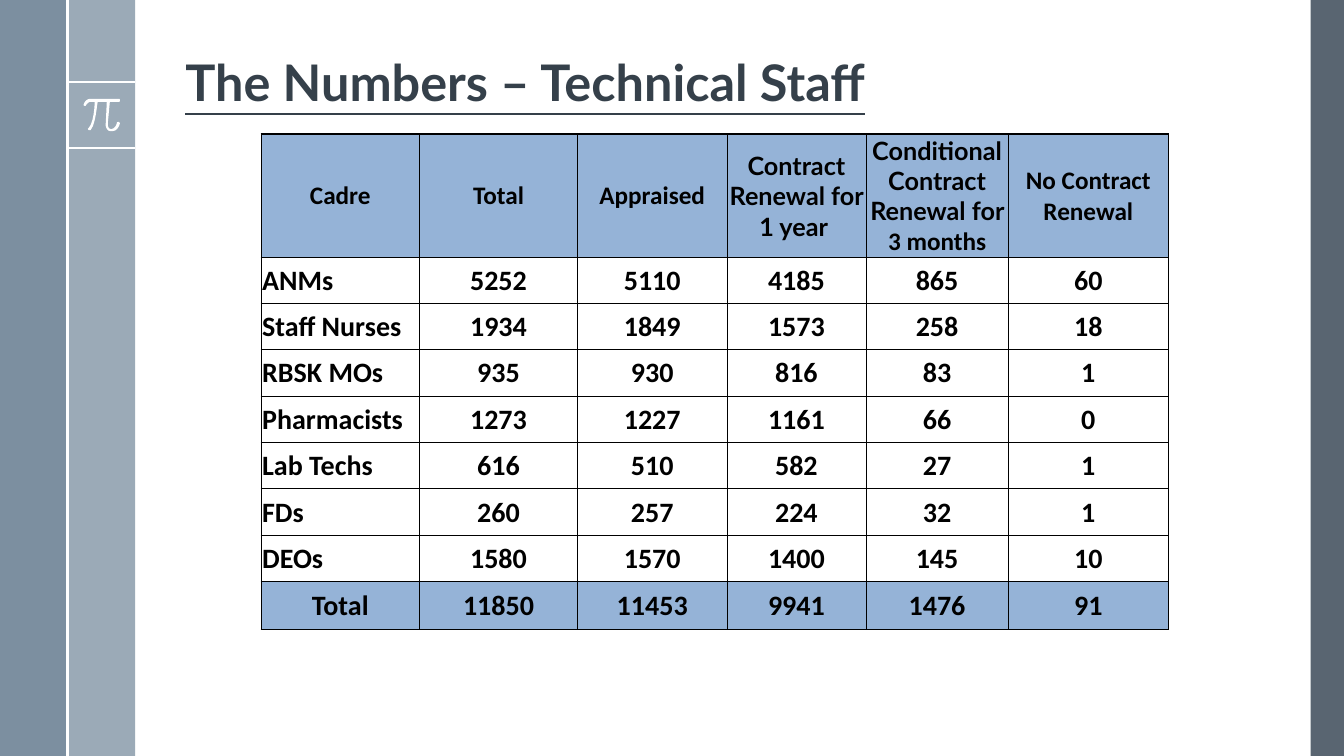
from lxml import etree
from pptx import Presentation, util as u
from pptx.dml.color import RGBColor
from pptx.enum import shapes, text
from pptx.oxml import ns

PX = 9144
COLORS = {
    "white": "FFFFFF", "black": "000000", "title": "35404A", "head": "95B3D7",
    "right": "475562", "band": "9BAAB7", "left": "6A8093",
}
ANCHOR = text.MSO_ANCHOR
ALIGN = text.PP_ALIGN


def rgb(name):
    return RGBColor.from_string(COLORS[name])


def write(tf, content, font="Calibri", size=20, color="black", underline=None,
          align=ALIGN.LEFT, spacing=None):
    p = tf.paragraphs[0]
    p.alignment = align
    p.line_spacing = spacing
    runs = [(content, font)] if isinstance(content, str) else content
    for words, face in runs:
        r = p.add_run()
        r.text = words
        r.font.name = face
        r.font.size = u.Pt(size)
        r.font.bold = True
        r.font.underline = underline
        r.font.color.rgb = rgb(color)


def cubic(start, seg, steps=6):
    pts = [start, seg[:2], seg[2:4], seg[4:]]
    for i in range(1, steps + 1):
        t = i / steps
        weights = ((1 - t) ** 3, 3 * t * (1 - t) ** 2, 3 * t * t * (1 - t), t ** 3)
        yield tuple(sum(w * pt[k] for w, pt in zip(weights, pts)) for k in (0, 1))


class Deck:
    def __init__(self, width, height):
        self.prs = Presentation()
        self.prs.slide_width = width * PX
        self.prs.slide_height = height * PX
        self.s = self.prs.slides.add_slide(self.prs.slide_layouts[6])

    def paint(self, sp, color, alpha=100):
        sp.shadow.inherit = False
        sp.line.fill.background()
        sp.fill.solid()
        sp.fill.fore_color.rgb = rgb(color)
        if alpha < 100:
            clr = sp.fill._xPr.find(".//" + ns.qn("a:srgbClr"))
            etree.SubElement(clr, ns.qn("a:alpha"), val=str(alpha * 1000))

    def rect(self, x, y, w, h, color, alpha=100):
        sp = self.s.shapes.add_shape(
            shapes.MSO_SHAPE.RECTANGLE, x * PX, y * PX, w * PX, h * PX)
        self.paint(sp, color, alpha)

    def line(self, x1, y1, x2, y2, color="white", width=1.5):
        c = self.s.shapes.add_connector(
            shapes.MSO_CONNECTOR.STRAIGHT, x1 * PX, y1 * PX, x2 * PX, y2 * PX)
        c.line.color.rgb = rgb(color)
        c.line.width = u.Pt(width)
        etree.SubElement(c._element.spPr, ns.qn("a:effectLst"))

    def outline(self, start, segments, color):
        pts = [start]
        for seg in segments:
            pts.extend([seg] if len(seg) == 2 else list(cubic(pts[-1], seg)))
        emu = [(x * PX, y * PX) for x, y in pts]
        fb = self.s.shapes.build_freeform(*emu[0])
        fb.add_line_segments(emu[1:], close=True)
        self.paint(fb.convert_to_shape(), color)

    def title(self, x, y, w, h, content):
        tf = self.s.shapes.add_textbox(x * PX, y * PX, w * PX, h * PX).text_frame
        tf.word_wrap = True
        tf.vertical_anchor = ANCHOR.BOTTOM
        write(tf, content, font="Lato", size=36, color="title", underline=True, spacing=0.9)

    def borders(self, cell, widths):
        tcPr = cell._tc.get_or_add_tcPr()
        for side, width in widths.items():
            ln = etree.SubElement(tcPr, ns.qn("a:ln" + side), w=str(u.Pt(width)))
            fill = etree.SubElement(ln, ns.qn("a:solidFill"))
            etree.SubElement(fill, ns.qn("a:srgbClr"), val=COLORS["black"])

    def table(self, x, y, cols, heights, rows):
        tbl = self.s.shapes.add_table(
            len(rows), len(cols), x * PX, y * PX, sum(cols) * PX, sum(heights) * PX).table
        tbl.first_row = tbl.horz_banding = False
        for col, w in zip(tbl.columns, cols):
            col.width = w * PX
        for row, h in zip(tbl.rows, heights):
            row.height = h * PX
        last = len(rows) - 1
        for i, row in enumerate(rows):
            shaded = i in (0, last)
            for j, value in enumerate(row):
                cell = tbl.cell(i, j)
                cell.margin_left = cell.margin_right = cell.margin_top = PX
                cell.margin_bottom = 0
                cell.vertical_anchor = ANCHOR.MIDDLE
                self.borders(cell, {"L": 0.5 if j else 1, "R": 0.5,
                                    "T": 0.5 if i else 1, "B": 1 if i == last else 0.5})
                if shaded:
                    cell.fill.solid()
                    cell.fill.fore_color.rgb = rgb("head")
                else:
                    cell.fill.background()
                write(cell.text_frame, value, size=20 if i else 18,
                      align=ALIGN.CENTER if shaded or j else ALIGN.LEFT)


PI_SYMBOL = [
    (90, 98), (85, 98, 83, 103, 83, 104), (83, 104, 83, 105, 84, 105), (85, 105),
    (85, 105, 87, 101, 90, 101), (94, 101), (94, 105, 93, 122, 88, 127),
    (87, 128, 87, 128, 88, 129), (88, 129, 89, 129, 89, 129), (90, 129),
    (95, 123, 96, 105, 97, 101), (106, 101), (105, 122),
    (105, 122, 104, 126, 107, 129), (108, 130, 109, 130, 110, 130), (112, 130),
    (117, 130, 119, 123, 119, 122), (119, 122, 118, 121, 118, 121),
    (117, 121, 116, 121, 116, 122), (116, 122, 115, 127, 111, 128),
    (110, 128, 109, 128, 108, 127), (107, 126, 107, 123, 107, 122),
    (109, 101), (118, 101), (119, 101, 119, 100, 119, 100),
    (119, 99, 119, 98, 118, 98),
]

STAFF = [
    ["Cadre", "Total", "Appraised", [("Contract Renewal for 1 year ", "Lato")],
     [("Conditional Contract Renewal for ", "Lato"), ("3 months", "Calibri")],
     "No Contract Renewal"],
    ["ANMs", "5252", "5110", "4185", "865", "60"],
    ["Staff Nurses", "1934", "1849", "1573", "258", "18"],
    ["RBSK MOs", "935", "930", "816", "83", "1"],
    ["Pharmacists", "1273", "1227", "1161", "66", "0"],
    ["Lab Techs", "616", "510", "582", "27", "1"],
    ["FDs", "260", "257", "224", "32", "1"],
    ["DEOs", "1580", "1570", "1400", "145", "10"],
    ["Total", "11850", "11453", "9941", "1476", "91"],
]


def main():
    d = Deck(1333, 750)
    d.rect(1300, 0, 33, 750, "right", 90)
    d.rect(67, 0, 67, 750, "band")
    d.rect(0, 0, 67, 750, "left", 88)
    for y in (81, 147):
        d.line(67, y, 134, y)
    d.outline((118, 98), PI_SYMBOL, "white")
    d.line(67, 0, 67, 750)
    d.title(174, 18, 1070, 98, "The Numbers – Technical Staff")
    d.table(259, 133, [157, 157, 148, 138, 141, 159], [122] + [46] * 7 + [48], STAFF)
    d.prs.save("out.pptx")


if __name__ == "__main__":
    main()
